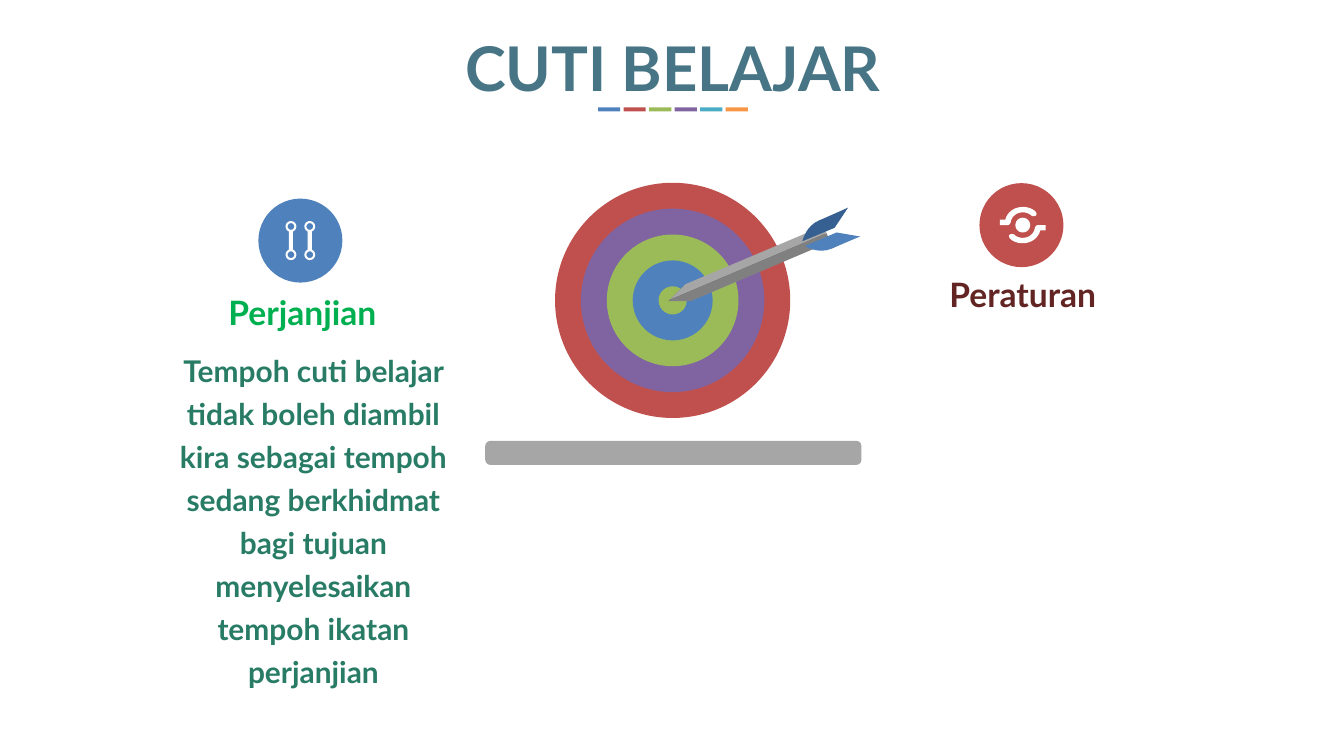
import math

from pptx import Presentation
from pptx import util as u
from pptx.dml.color import RGBColor
from pptx.enum import shapes, text

BLUE, RED, GREEN, PURPLE = "4F81BD", "C0504D", "9BBB59", "8064A2"
WHITE, GREY, FONT = "FFFFFF", "A6A6A6", "Lato"

# Content: words, size, colour, box (left, top, width, height), wrap
TITLE = ("CUTI BELAJAR", 66, "477585", (1.43, 0.4, 17.17, 1.21), True)
HEADINGS = [
    ("Perjanjian", 36, "00B050", (3.14, 4.27, 2.72, 0.76), False),
    ("Peraturan", 36, "632523", (13.89, 4.01, 2.66, 0.76), False),
]
BODY = ("Tempoh cuti belajar tidak boleh diambil kira sebagai tempoh sedang "
        "berkhidmat bagi tujuan menyelesaikan tempoh ikatan perjanjian",
        32, "287C66", (2.29, 5.07, 4.75, 4.03), True)
DASH_COLOURS = [BLUE, RED, GREEN, PURPLE, "4BACC6", "F79646"]
RING_COLOURS = [RED, PURPLE, GREEN, BLUE, GREEN]
BADGES = [((4.47, 3.58), BLUE), ((15.2, 3.35), RED)]

# Dart: upper and lower side of the shaft, then the two feathers
SHAFT_UPPER = [(10.2, 4.23), (12.26, 3.36), (12.3, 3.47), (9.97, 4.46)]
SHAFT_LOWER = [(10.3, 4.46), (12.35, 3.59), (12.3, 3.47), (9.97, 4.46)]
SHAFT_LAYERS = [(0.02, "515D5D", "828286"), (0, GREY, "808080")]
FEATHERS = [
    ("376092", (11.94, 3.59), [(11.94, 3.59, 11.99, 3.36, 12.19, 3.28),
                               (12.4, 3.19, 12.62, 3.09, 12.62, 3.09), (12.42, 3.39)]),
    (BLUE, (11.98, 3.66), [(11.98, 3.66, 12.17, 3.79, 12.38, 3.7),
                           (12.58, 3.61, 12.8, 3.52, 12.8, 3.52), (12.45, 3.46)]),
]

# Swirl icon: one arm; the other is its half-turn about the centre
SWIRL_CENTRE = (15.22, 3.35)
SWIRL_START = (15.04, 3.31)
SWIRL_ARM = [
    (15.05, 3.22, 15.13, 3.16, 15.22, 3.16), (15.27, 3.16, 15.32, 3.18, 15.35, 3.21),
    (15.36, 3.22, 15.4, 3.22, 15.41, 3.21), (15.43, 3.2, 15.43, 3.18, 15.41, 3.15),
    (15.36, 3.1, 15.29, 3.08, 15.22, 3.08), (15.1, 3.08, 14.99, 3.15, 14.96, 3.27),
    (14.88, 3.27), (14.88, 3.35), (14.99, 3.35), (15.03, 3.35, 15.03, 3.32, 15.04, 3.31),
]

presentation = Presentation()
presentation.slide_width, presentation.slide_height = u.Inches(20), u.Inches(11.25)
slide = presentation.slides.add_slide(presentation.slide_layouts[6])


def rgb(colour):
    return RGBColor.from_string(colour)


def paint(shape, colour):
    shape.shadow.inherit = False
    shape.fill.solid()
    shape.fill.fore_color.rgb = rgb(colour)
    shape.line.fill.background()
    return shape


def add_preset(kind, box, colour):
    return paint(slide.shapes.add_shape(kind, *map(u.Inches, box)), colour)


def add_circle(centre, diameter, colour):
    x, y = centre
    box = (x - diameter / 2, y - diameter / 2, diameter, diameter)
    return add_preset(shapes.MSO_SHAPE.OVAL, box, colour)


def add_outline(contours, colour):
    """Fill closed contours as one freeform; inner contours become holes."""
    contours = [[(u.Inches(x), u.Inches(y)) for x, y in contour] for contour in contours]
    builder = slide.shapes.build_freeform(*contours[0][0])
    for index, contour in enumerate(contours):
        if index:
            builder.move_to(*contour[0])
        builder.add_line_segments(contour[1:], close=True)
    return paint(builder.convert_to_shape(), colour)


def trace(start, segments, steps=8):
    """Points along lines (x, y) and cubic curves (x1, y1, x2, y2, x, y)."""
    points = [start]
    for segment in segments:
        if len(segment) == 2:
            points.append(segment)
            continue
        corners = [points[-1], segment[:2], segment[2:4], segment[4:]]
        for step in range(1, steps + 1):
            t = step / steps
            weights = ((1 - t) ** 3, 3 * t * (1 - t) ** 2, 3 * t * t * (1 - t), t ** 3)
            points.append(tuple(sum(w * corner[axis] for w, corner in zip(weights, corners))
                                for axis in (0, 1)))
    return points


def arc(centre, radius, first, last, steps=24):
    angles = [math.radians(first + (last - first) * n / steps) for n in range(steps + 1)]
    return [(centre[0] + radius * math.cos(a), centre[1] + radius * math.sin(a)) for a in angles]


def add_text(words, size, colour, box, wrap, margins=None, spacing=None, before=None):
    frame = slide.shapes.add_textbox(*map(u.Inches, box)).text_frame
    frame.word_wrap = wrap
    frame.auto_size = text.MSO_AUTO_SIZE.SHAPE_TO_FIT_TEXT
    if margins:
        frame.margin_left = frame.margin_right = u.Inches(margins[0])
        frame.margin_top = frame.margin_bottom = u.Inches(margins[1])
    paragraph = frame.paragraphs[0]
    paragraph.text = words
    paragraph.alignment = text.PP_ALIGN.CENTER
    if spacing:
        paragraph.line_spacing = spacing
        paragraph.space_before = u.Pt(before)
    font = paragraph.font
    font.name, font.size, font.bold = FONT, u.Pt(size), True
    font.color.rgb = rgb(colour)


# Badges
for centre, colour in BADGES:
    add_circle(centre, 1.25, colour)

# Link icon: two bars with a ring at each end
link_contours = []
for x in (4.33, 4.61):
    top, bottom = (x, 3.37), (x, 3.79)
    link_contours += [
        arc(top, 0.08, 112, 428) + arc(bottom, 0.08, -68, 248),
        arc(top, 0.05, 0, 360),
        arc(bottom, 0.05, 0, 360),
    ]
add_outline(link_contours, WHITE)

# Swirl icon
arm = trace(SWIRL_START, SWIRL_ARM)
turned_arm = [(2 * SWIRL_CENTRE[0] - x, 2 * SWIRL_CENTRE[1] - y) for x, y in arm]
add_outline([arc(SWIRL_CENTRE, 0.11, 0, 360), arm, turned_arm], WHITE)

# Column text
for heading in HEADINGS:
    add_text(*heading, margins=(0.15, 0.07))
add_text(*BODY, margins=(0.15, 0.07), spacing=1.2, before=17)

# Base bar and target
bar = add_preset(shapes.MSO_SHAPE.ROUNDED_RECTANGLE, (7.22, 6.56, 5.6, 0.36), GREY)
bar.adjustments[0] = 0.22
for ring, colour in enumerate(RING_COLOURS):
    add_circle((10.01, 4.47), 3.5 - 0.77 * ring, colour)

# Dart
for shift, upper_colour, lower_colour in SHAFT_LAYERS:
    for side, colour in ((SHAFT_UPPER, upper_colour), (SHAFT_LOWER, lower_colour)):
        add_outline([[(x - shift, y + shift) for x, y in side]], colour)
for colour, start, segments in FEATHERS:
    add_outline([trace(start, segments)], colour)

# Title and its coloured dashes
add_text(*TITLE)
for index, colour in enumerate(DASH_COLOURS):
    add_preset(shapes.MSO_SHAPE.RECTANGLE, (8.9 + 0.38 * index, 1.6, 0.33, 0.06), colour)

presentation.save("out.pptx")
